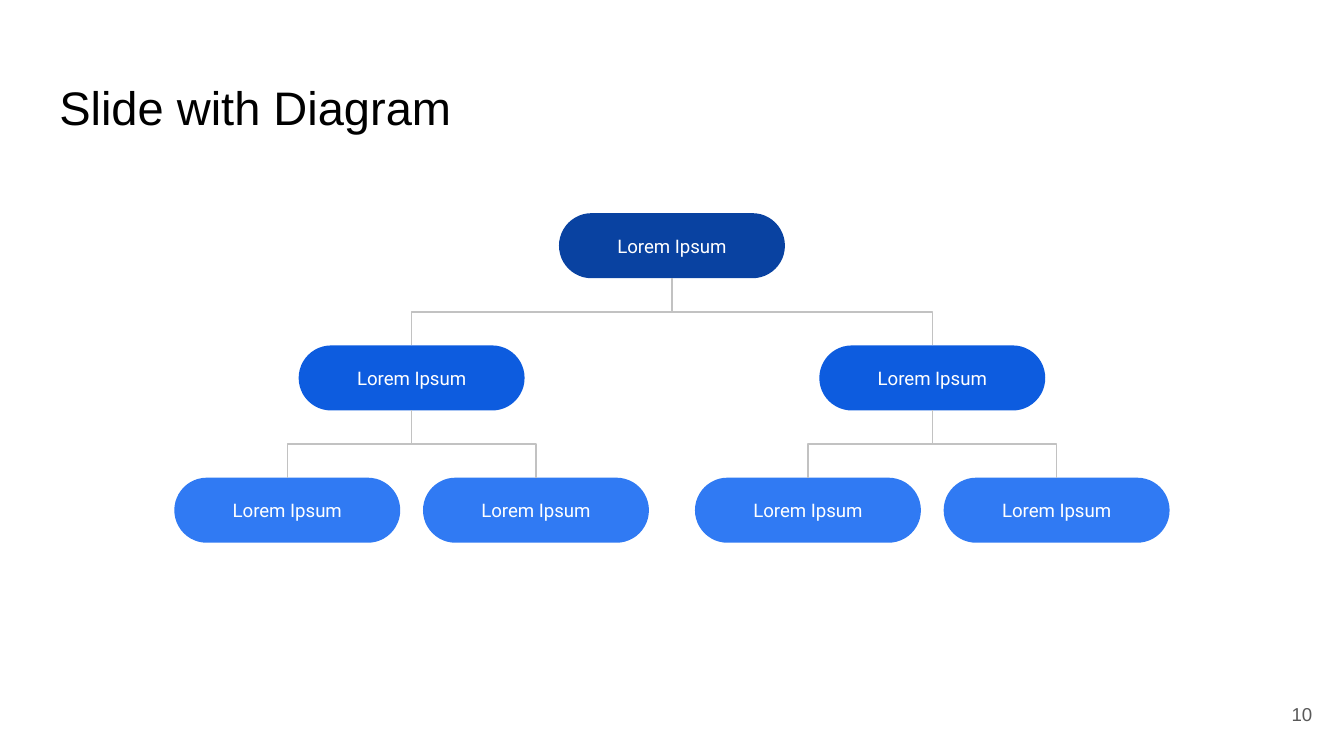
"""Build a slide with a three-level hierarchy diagram."""
from dataclasses import dataclass

from lxml.etree import SubElement
from pptx import Presentation
from pptx.dml.color import RGBColor
from pptx.enum.shapes import MSO_CONNECTOR, MSO_SHAPE
from pptx.enum.text import MSO_ANCHOR, MSO_AUTO_SIZE, PP_ALIGN
from pptx.oxml.ns import qn
from pptx.util import Cm, Pt


@dataclass(frozen=True)
class Theme:
    """Colours, fonts and type sizes of the slide."""
    background: str = "FFFFFF"
    title: str = "000000"
    page: str = "595959"
    label: str = "FFFFFF"
    link: str = "C2C2C2"
    levels: tuple = ("0942A1", "0D5CDF", "307AF3")
    main_font: str = "Arial"
    label_font: str = "Roboto"
    title_size: float = 25.2
    small_size: float = 10
    link_width: float = 0.75


THEME = Theme()
NODE_WIDTH, NODE_HEIGHT = 4.27, 1.23
ROOT_CENTRE, ROOT_TOP, LEVEL_PITCH = 12.7, 4.03, 2.5
CHILD_OFFSETS = (4.92, 2.35)


def write_text(holder, text, *, size, color, font=THEME.main_font,
               align=PP_ALIGN.LEFT, anchor=MSO_ANCHOR.MIDDLE):
    """Put formatted text into a shape or placeholder."""
    frame = holder.text_frame
    frame.word_wrap = True
    frame.auto_size = MSO_AUTO_SIZE.NONE
    frame.vertical_anchor = anchor
    frame.margin_left = frame.margin_right = Cm(0.25)
    frame.margin_top = frame.margin_bottom = Cm(0.25)
    paragraph = frame.paragraphs[0]
    paragraph.alignment = align
    run = paragraph.add_run()
    run.text = text
    run.font.size = Pt(size)
    run.font.name = font
    run.font.color.rgb = RGBColor.from_string(color)


def add_title(slide, text):
    """Place and fill the title placeholder."""
    title = slide.shapes.title
    title.left, title.top = Cm(0.87), Cm(1.24)
    title.width, title.height = Cm(23.67), Cm(1.6)
    write_text(title, text, size=THEME.title_size, color=THEME.title,
               anchor=MSO_ANCHOR.TOP)


def add_page_number(slide, number):
    """Write the page number in the bottom right corner."""
    page = slide.shapes.add_textbox(Cm(23.53), Cm(12.95), Cm(1.52), Cm(1.09))
    write_text(page, number, size=THEME.small_size, color=THEME.page,
               align=PP_ALIGN.RIGHT)


def add_node(slide, text, centre, level):
    """Draw one pill-shaped node of the hierarchy."""
    node = slide.shapes.add_shape(
        MSO_SHAPE.ROUNDED_RECTANGLE,
        Cm(centre - NODE_WIDTH / 2), Cm(ROOT_TOP + level * LEVEL_PITCH),
        Cm(NODE_WIDTH), Cm(NODE_HEIGHT))
    node.adjustments[0] = 0.5
    node.shadow.inherit = False
    node.fill.solid()
    node.fill.fore_color.rgb = RGBColor.from_string(THEME.levels[level])
    node.line.fill.background()
    write_text(node, text, size=THEME.small_size, color=THEME.label,
               font=THEME.label_font, align=PP_ALIGN.CENTER)
    return node


def add_link(slide, parent, child):
    """Join a parent's bottom to a child's top with a down-across-down elbow."""
    link = slide.shapes.add_connector(MSO_CONNECTOR.ELBOW, 0, 0, 0, 0)
    link.begin_connect(parent, 2)
    link.end_connect(child, 0)
    start_x, end_x = parent.left + parent.width // 2, child.left + child.width // 2
    start_y, end_y = parent.top + parent.height, child.top
    across, drop = abs(end_x - start_x), end_y - start_y
    link.left = (start_x + end_x - drop) // 2
    link.top = (start_y + end_y - across) // 2
    link.width, link.height = drop, across
    frame = link.element.spPr.find(qn("a:xfrm"))
    frame.set("rot", "5400000")
    frame.set("flipH", "0")
    frame.set("flipV", "1" if end_x > start_x else "0")
    link.line.color.rgb = RGBColor.from_string(THEME.link)
    link.line.width = Pt(THEME.link_width)
    SubElement(link.element.spPr, qn("a:effectLst"))


def add_hierarchy(slide, text):
    """Draw the levels of nodes, then the links between them."""
    row = [(ROOT_CENTRE, add_node(slide, text, ROOT_CENTRE, 0))]
    pairs = []
    for level, offset in enumerate(CHILD_OFFSETS, start=1):
        children = []
        for parent_centre, parent in row:
            for centre in (parent_centre - offset, parent_centre + offset):
                child = add_node(slide, text, centre, level)
                children.append((centre, child))
                pairs.append((parent, child))
        row = children
    for parent, child in pairs:
        add_link(slide, parent, child)


def main():
    """Build and save the presentation."""
    deck = Presentation()
    deck.slide_width, deck.slide_height = Cm(25.4), Cm(14.29)
    slide = deck.slides.add_slide(deck.slide_layouts.get_by_name("Title Only"))
    slide.background.fill.solid()
    slide.background.fill.fore_color.rgb = RGBColor.from_string(THEME.background)
    add_title(slide, "Slide with Diagram")
    add_page_number(slide, "10")
    add_hierarchy(slide, "Lorem Ipsum")
    deck.save("out.pptx")


if __name__ == "__main__":
    main()
